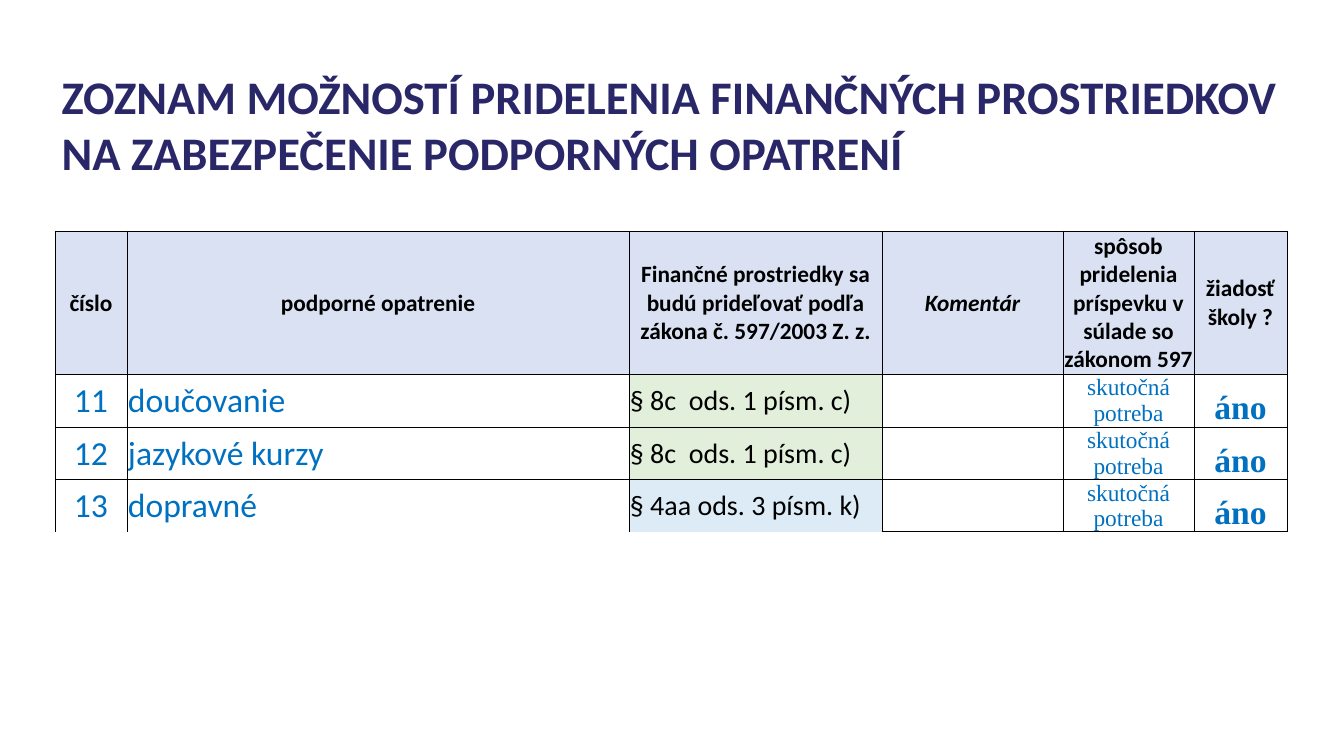
from lxml.etree import SubElement
from pptx import Presentation
from pptx.dml.color import RGBColor
from pptx.enum.text import MSO_ANCHOR as Anchor, PP_ALIGN as Align
from pptx.oxml.ns import qn
from pptx.util import Pt

EMU_PER_PX = 914400 / 67.2
BLACK, BLUE, NAVY = "000000", "0070C0", "2A2768"
HEADER_FILL, GREEN, PALE_BLUE = "D9E1F2", "E2EFDA", "DDEBF7"

TITLE = "ZOZNAM MOŽNOSTÍ PRIDELENIA FINANČNÝCH PROSTRIEDKOV\nNA ZABEZPEČENIE PODPORNÝCH OPATRENÍ"
HEADINGS = [
    "číslo",
    "podporné opatrenie",
    "Finančné prostriedky sa budú prideľovať podľa zákona č. 597/2003 Z. z.",
    "Komentár",
    "spôsob pridelenia príspevku v súlade so zákonom 597",
    "žiadosť školy ?",
]
MEASURES = [
    ("11", "doučovanie", "§ 8c  ods. 1 písm. c)", "", "skutočná potreba", "áno"),
    ("12", "jazykové kurzy", "§ 8c  ods. 1 písm. c)", "", "skutočná potreba", "áno"),
    ("13", "dopravné", "§ 4aa ods. 3 písm. k)", "", "skutočná potreba", "áno"),
]
LAW_FILLS = [GREEN, GREEN, PALE_BLUE]
COLUMN_WIDTHS = [72, 502, 253, 181, 131, 93]
ROW_HEIGHTS = [112, 46, 46, 49]
LINES_BELOW = [1, 0.5, 1, 1]
COMMENT_COLUMN, LAW_COLUMN = 3, 2
COLUMN_FORMATS = [
    dict(size=36, color=BLUE, align=Align.CENTER),
    dict(size=36, color=BLUE),
    dict(size=30),
    dict(),
    dict(size=25, color=BLUE, font="Times New Roman", align=Align.CENTER, anchor=Anchor.BOTTOM),
    dict(size=36, color=BLUE, font="Times New Roman", bold=True, align=Align.CENTER, anchor=Anchor.BOTTOM),
]


def px(length):
    return round(length * EMU_PER_PX)


def rgb(value):
    return RGBColor.from_string(value)


def write(frame, text, size=25, color=BLACK, font="Calibri", bold=False, italic=False,
          align=Align.LEFT, anchor=Anchor.MIDDLE):
    frame.word_wrap = True
    frame.vertical_anchor = anchor
    paragraph = frame.paragraphs[0]
    paragraph.text = text
    paragraph.alignment = align
    for run in paragraph.runs:
        run.font.size = Pt(size)
        run.font.name = font
        run.font.bold = bold
        run.font.italic = italic
        run.font.color.rgb = rgb(color)


def set_border(cell, side, width):
    line = SubElement(cell._tc.get_or_add_tcPr(), qn(f"a:ln{side}"), w=str(Pt(width)))
    if width:
        fill = SubElement(line, qn("a:solidFill"))
        SubElement(fill, qn("a:srgbClr"), val=BLACK)
    else:
        SubElement(line, qn("a:noFill"))


def format_cell(cell, row, column):
    cell.margin_left = cell.margin_right = cell.margin_top = px(1)
    cell.margin_bottom = 0
    open_bottom = row == len(MEASURES) and column < COMMENT_COLUMN
    widths = {"L": 1, "R": 1, "T": LINES_BELOW[row - 1] if row else 1,
              "B": 0 if open_bottom else LINES_BELOW[row]}
    for side, width in widths.items():
        set_border(cell, side, width)
    if row and column != LAW_COLUMN:
        cell.fill.background()
    else:
        cell.fill.solid()
        cell.fill.fore_color.rgb = rgb(LAW_FILLS[row - 1] if row else HEADER_FILL)


def fill_table(table):
    table.first_row = table.horz_banding = False
    for column, width in zip(table.columns, COLUMN_WIDTHS):
        column.width = px(width)
    for row, height in zip(table.rows, ROW_HEIGHTS):
        row.height = px(height)
    for row, texts in enumerate([HEADINGS, *MEASURES]):
        for column, text in enumerate(texts):
            cell = table.cell(row, column)
            format_cell(cell, row, column)
            heading_format = dict(bold=True, italic=column == COMMENT_COLUMN, align=Align.CENTER)
            text_format = dict(COLUMN_FORMATS[column] if row else heading_format)
            cell.vertical_anchor = text_format.pop("anchor", Anchor.MIDDLE)
            write(cell.text_frame, text, anchor=cell.vertical_anchor, **text_format)


def main():
    presentation = Presentation()
    presentation.slide_width, presentation.slide_height = px(1344), px(756)
    slide = presentation.slides.add_slide(presentation.slide_layouts[6])
    measures = slide.shapes.add_table(len(ROW_HEIGHTS), len(COLUMN_WIDTHS), px(55), px(231),
                                      px(sum(COLUMN_WIDTHS)), px(sum(ROW_HEIGHTS)))
    fill_table(measures.table)
    title = slide.shapes.add_textbox(px(55), px(111), px(1256), px(26))
    write(title.text_frame, TITLE, size=50, color=NAVY, bold=True)
    presentation.save("out.pptx")


if __name__ == "__main__":
    main()
